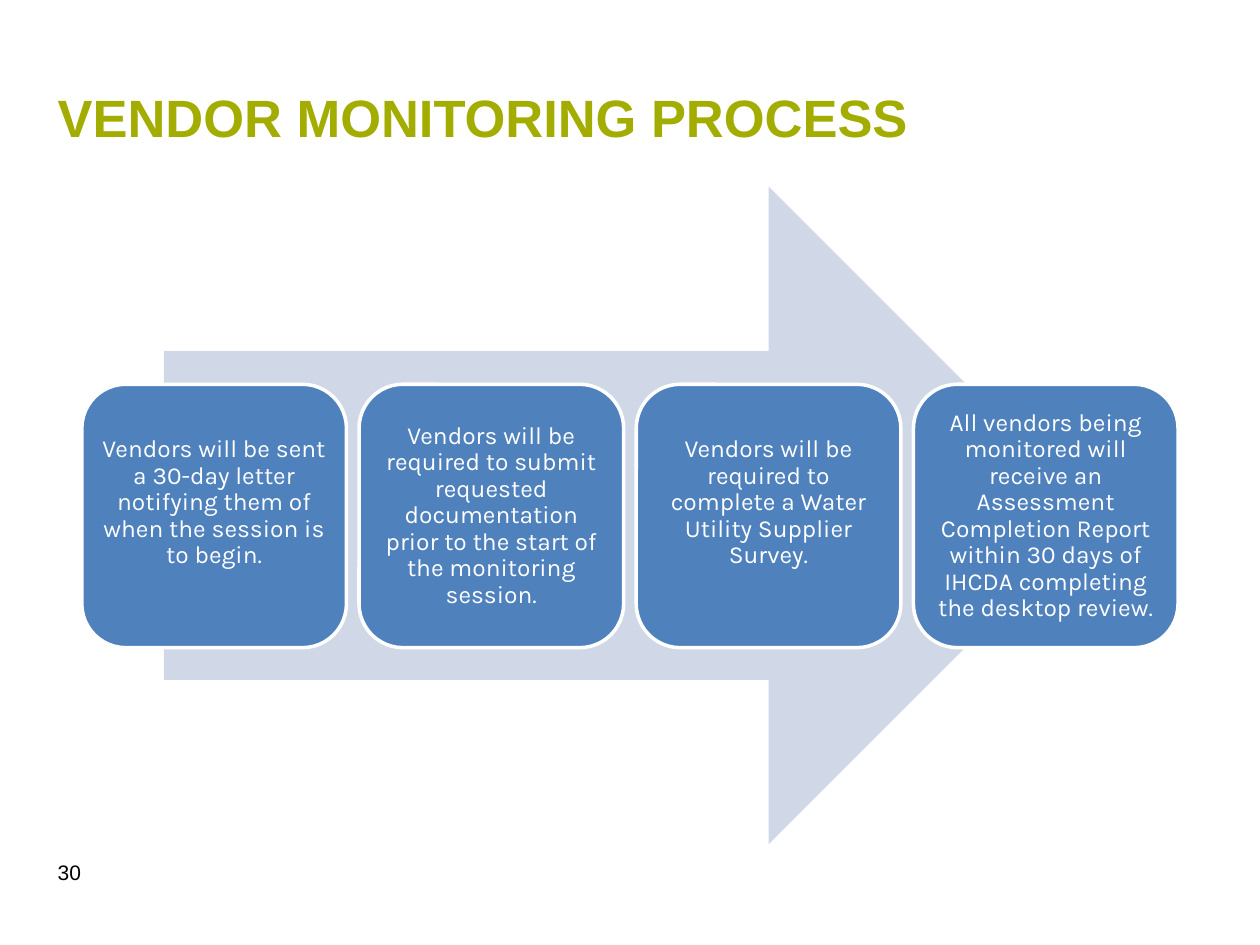
from dataclasses import dataclass

from pptx import Presentation
from pptx.dml.color import RGBColor as Rgb
from pptx.enum.shapes import MSO_SHAPE as Kind
from pptx.enum.text import MSO_ANCHOR as Anchor, PP_ALIGN as Align
from pptx.shapes.autoshape import Shape
from pptx.slide import Slide
from pptx.util import Inches, Pt


@dataclass(frozen=True)
class Theme:
    lime: Rgb = Rgb(0xA2, 0xAD, 0x00)
    pale: Rgb = Rgb(0xD0, 0xD8, 0xE8)
    blue: Rgb = Rgb(0x4F, 0x81, 0xBD)
    white: Rgb = Rgb(0xFF, 0xFF, 0xFF)
    black: Rgb = Rgb(0, 0, 0)
    sans: str = "Arial"
    body: str = "Karla"
    head: int = 30
    step: int = 14
    page: int = 12


@dataclass(frozen=True)
class Grid:
    left: float = 0.65
    top: float = 3.05
    pitch: float = 2.2
    width: float = 2.1
    height: float = 2.09


@dataclass(frozen=True)
class Step:
    text: str
    lift: float = 0


@dataclass(frozen=True)
class Label:
    text: str
    box: tuple[float, float, float, float]
    size: int
    color: Rgb
    bold: bool = False


THEME = Theme()
GRID = Grid()
PAD = 0.06
LINE = 0.21
LABELS = (
    Label("VENDOR MONITORING PROCESS", (0.36, 0.3, 9.16, 1.25), THEME.head, THEME.lime, True),
    Label("30", (0.36, 6.72, 2.33, 0.4), THEME.page, THEME.black),
)
STEPS = (
    Step("Vendors will be sent a 30-day letter notifying them of when the session is to begin.", LINE),
    Step("Vendors will be required to submit requested documentation prior to the start "
         "of the monitoring session."),
    Step("Vendors will be required to complete a Water Utility Supplier Survey.", LINE),
    Step("All vendors being monitored will receive an Assessment Completion Report "
         "within 30 days of IHCDA completing the desktop review."),
)


def write(shape: Shape, text: str, face: str, size: int, color: Rgb, bold: bool = False) -> None:
    """Set one wrapped, vertically centred paragraph in a shape."""
    frame = shape.text_frame
    frame.word_wrap = True
    frame.vertical_anchor = Anchor.MIDDLE
    para = frame.paragraphs[0]
    para.text = text
    font = para.font
    font.name, font.size, font.bold = face, Pt(size), bold
    font.color.rgb = color


def draw_label(slide: Slide, label: Label) -> None:
    """Add a plain text box."""
    box = slide.shapes.add_textbox(*map(Inches, label.box))
    write(box, label.text, THEME.sans, label.size, label.color, label.bold)


def draw_shape(slide: Slide, kind: Kind, fill: Rgb, *box: float) -> Shape:
    """Add a flat filled shape without an outline."""
    shape = slide.shapes.add_shape(kind, *map(Inches, box))
    shape.shadow.inherit = False
    shape.fill.solid()
    shape.fill.fore_color.rgb = fill
    shape.line.fill.background()
    return shape


def draw_step(slide: Slide, col: int, step: Step) -> None:
    """Add one rounded step card in its grid column."""
    card = draw_shape(slide, Kind.ROUNDED_RECTANGLE, THEME.blue,
                      GRID.left + col * GRID.pitch, GRID.top, GRID.width, GRID.height)
    card.line.color.rgb = THEME.white
    card.line.width = Pt(2)
    write(card, step.text, THEME.body, THEME.step, THEME.white)
    frame = card.text_frame
    frame.margin_left = frame.margin_right = frame.margin_top = Inches(PAD)
    frame.margin_bottom = Inches(PAD + step.lift)
    para = frame.paragraphs[0]
    para.alignment = Align.CENTER
    para.line_spacing = 0.9


def main() -> None:
    """Build the slide and save it."""
    deck = Presentation()
    deck.slide_width, deck.slide_height = Inches(10), Inches(7.5)
    slide = deck.slides.add_slide(deck.slide_layouts[6])
    for label in LABELS:
        draw_label(slide, label)
    draw_shape(slide, Kind.RIGHT_ARROW, THEME.pale, 1.3, 1.48, 7.41, 5.22)
    for col, step in enumerate(STEPS):
        draw_step(slide, col, step)
    deck.save("out.pptx")


if __name__ == "__main__":
    main()
